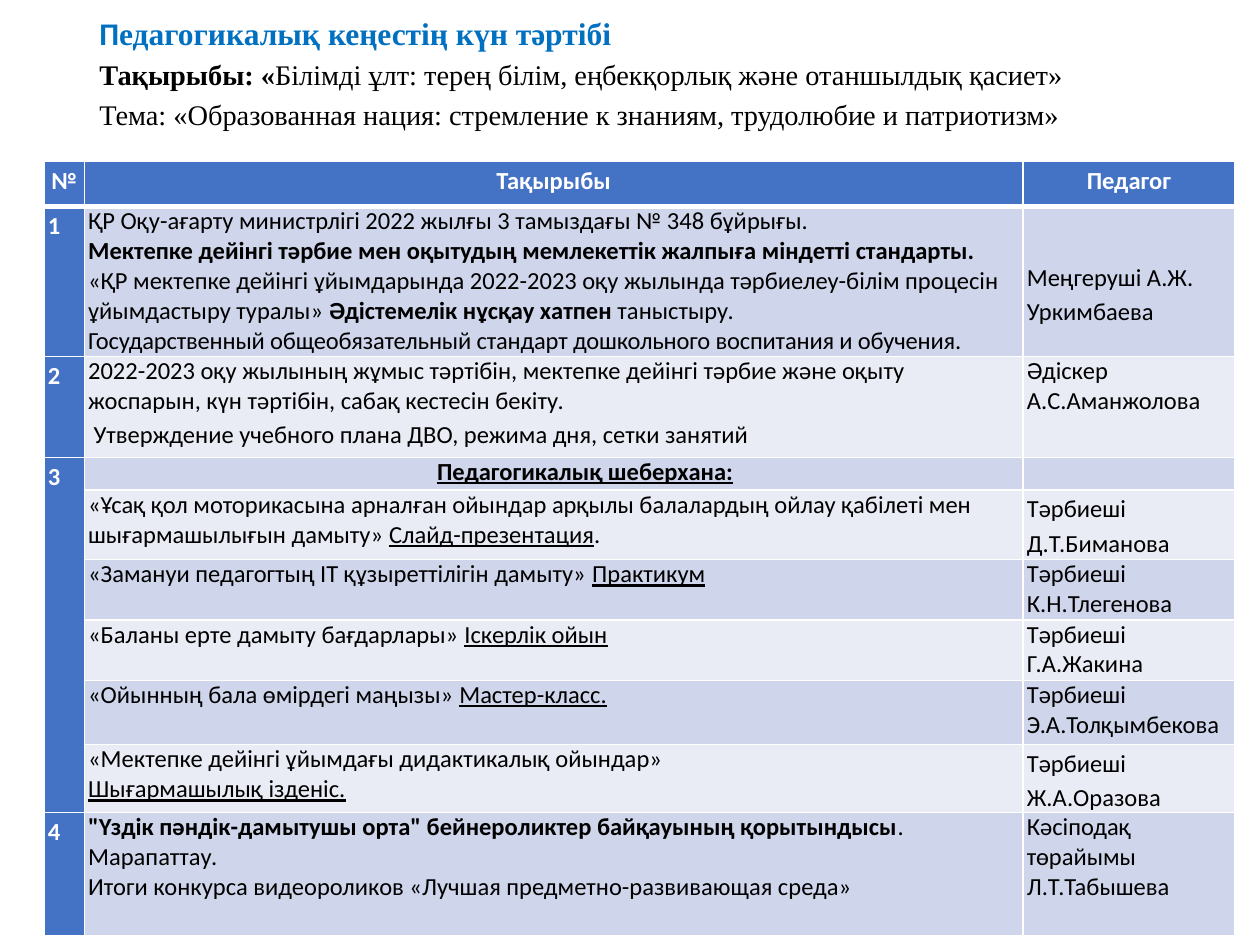
from dataclasses import dataclass

from lxml.etree import SubElement
from pptx import Presentation
from pptx.dml.color import RGBColor
from pptx.enum.text import MSO_ANCHOR, PP_ALIGN
from pptx.oxml.ns import qn
from pptx.util import Inches, Pt

BLACK = RGBColor(0x00, 0x00, 0x00)
WHITE = RGBColor(0xFF, 0xFF, 0xFF)
TITLE_BLUE = RGBColor(0x00, 0x70, 0xC0)
HEADER_BLUE = RGBColor(0x44, 0x72, 0xC4)
BAND_DARK = RGBColor(0xCF, 0xD5, 0xEA)
BAND_LIGHT = RGBColor(0xE9, 0xEB, 0xF5)

SERIF = "Times New Roman"
BOLD = {"bold": True}
UNDERLINED = {"underline": True}
HEADING = {"bold": True, "color": WHITE}
TITLE_STYLE = {"size": 18, "bold": True, "color": TITLE_BLUE}
SUBTITLE_STYLE = {"size": 16.2, "font": SERIF}

COLUMN_WIDTHS = [0.32, 7.45, 1.68]
ROW_HEIGHTS = [0.36, 1.19, 0.8, 0.26, 0.55, 0.48, 0.48, 0.51, 0.54, 0.98]
WORKSHOP_ROWS = (3, 8)


@dataclass
class Line:
    """One paragraph: runs are (text, format) pairs."""
    runs: list
    spaced: bool = False
    align: PP_ALIGN = PP_ALIGN.LEFT
    indent: float = 0


def plain(text, spaced=False):
    return Line([(text, {})], spaced)


def heading(text, align=PP_ALIGN.CENTER):
    return Line([(text, HEADING)], True, align)


def topic(text, activity, ending=""):
    return Line([(text, {}), (activity, UNDERLINED), (ending, {})])


HEADER = ["№", "Тақырыбы", "Педагог"]

# number, topic lines, teacher line
AGENDA = [
    ("1", [
        plain("ҚР Оқу-ағарту министрлігі 2022 жылғы 3 тамыздағы № 348 бұйрығы."),
        Line([("Мектепке дейінгі тәрбие мен оқытудың мемлекеттік жалпыға "
               "міндетті стандарты.", BOLD)]),
        Line([("«ҚР мектепке дейінгі ұйымдарында 2022-2023 оқу жылында "
               "тәрбиелеу-білім процесін ұйымдастыру туралы» ", {}),
              ("Әдістемелік нұсқау хатпен ", BOLD), ("таныстыру.", {})]),
        Line([("Государственный общеобязательный стандарт дошкольного "
               "воспитания и обучения.", {"spacing": -0.1})]),
    ], plain("Меңгеруші А.Ж. Уркимбаева", spaced=True)),
    ("2", [
        plain("2022-2023 оқу жылының жұмыс тәртібін, мектепке дейінгі тәрбие және "
              "оқыту жоспарын, күн тәртібін, сабақ кестесін бекіту."),
        plain(" Утверждение учебного плана ДВО, режима дня, сетки занятий", spaced=True),
    ], plain("Әдіскер А.С.Аманжолова")),
    ("3", [Line([("Педагогикалық шеберхана:", BOLD | UNDERLINED)],
                align=PP_ALIGN.CENTER, indent=0.5)], Line([])),
    ("", [topic("«Ұсақ қол моторикасына арналған ойындар арқылы балалардың ойлау "
                "қабілеті мен шығармашылығын дамыту» ", "Слайд-презентация", ".")],
     plain("Тәрбиеші Д.Т.Биманова", spaced=True)),
    ("", [topic("«Замануи педагогтың IT құзыреттілігін дамыту» ", "Практикум")],
     plain("Тәрбиеші К.Н.Тлегенова")),
    ("", [topic("«Баланы ерте дамыту бағдарлары» ", "Іскерлік ойын")],
     plain("Тәрбиеші Г.А.Жакина")),
    ("", [topic("«Ойынның бала өмірдегі маңызы» ", "Мастер-класс.")],
     plain("Тәрбиеші Э.А.Толқымбекова")),
    ("", [plain("«Мектепке дейінгі ұйымдағы дидактикалық ойындар»"),
          Line([("Шығармашылық ізденіс.", UNDERLINED)])],
     plain("Тәрбиеші Ж.А.Оразова", spaced=True)),
    ("4", [
        Line([("\"Үздік пәндік-дамытушы орта\" бейнероликтер байқауының "
               "қорытындысы", BOLD), (". Марапаттау.", {})]),
        plain("Итоги конкурса видеороликов «Лучшая предметно-развивающая среда»"),
    ], plain("Кәсіподақ төрайымы Л.Т.Табышева")),
]


def add_text(paragraph, text, *, size=14, font="Calibri", color=BLACK,
             bold=False, underline=False, spacing=0):
    run = paragraph.add_run()
    run.text = text
    run.font.size = Pt(size)
    run.font.name = font
    run.font.color.rgb = color
    run.font.bold = bold
    run.font.underline = underline
    if spacing:
        run.font._element.set("spc", str(round(spacing * 100)))


def write_lines(frame, lines):
    for index, line in enumerate(lines):
        paragraph = frame.add_paragraph() if index else frame.paragraphs[0]
        paragraph.alignment = line.align
        if line.spaced:
            paragraph.line_spacing = 1.15
            paragraph.space_after = Pt(10)
        if line.indent:
            paragraph._p.get_or_add_pPr().set("marL", str(Inches(line.indent)))
        for text, style in line.runs:
            if text:
                add_text(paragraph, text, **style)
        if not line.runs:
            SubElement(paragraph._p, qn("a:endParaRPr"), sz="1400")


def set_borders(cell, bottom_width=1):
    properties = cell._tc.get_or_add_tcPr()
    widths = {"a:lnL": 1, "a:lnR": 1, "a:lnT": 1, "a:lnB": bottom_width}
    for position, (tag, width) in enumerate(widths.items()):
        border = properties.makeelement(qn(tag), {"w": str(Pt(width))})
        fill = SubElement(border, qn("a:solidFill"))
        SubElement(fill, qn("a:srgbClr"), val=str(WHITE))
        properties.insert(position, border)


def fill_cell(cell, lines, color, bottom_width=1):
    cell.margin_left = cell.margin_right = Inches(0.03)
    cell.margin_top = cell.margin_bottom = 0
    cell.fill.solid()
    cell.fill.fore_color.rgb = color
    set_borders(cell, bottom_width)
    write_lines(cell.text_frame, lines)


def add_title(slide):
    box = slide.shapes.add_textbox(Inches(0.69), Inches(0.1), Inches(8.62), Inches(0.95))
    frame = box.text_frame
    frame.word_wrap = True
    frame.margin_top = frame.margin_bottom = 0
    frame.vertical_anchor = MSO_ANCHOR.TOP
    write_lines(frame, [
        Line([("П", TITLE_STYLE),
              ("едагогикалық кеңестің күн тәртібі", TITLE_STYLE | {"font": SERIF})]),
        Line([("Тақырыбы: «", SUBTITLE_STYLE | BOLD),
              ("Білімді ұлт: терең білім, еңбекқорлық және отаншылдық қасиет»",
               SUBTITLE_STYLE)]),
        Line([("Тема: «Образованная нация: стремление к знаниям, трудолюбие и "
               "патриотизм»", SUBTITLE_STYLE)]),
    ])
    for paragraph in frame.paragraphs:
        paragraph.line_spacing = Pt(22.5)


def add_agenda(slide):
    table = slide.shapes.add_table(
        len(ROW_HEIGHTS), len(COLUMN_WIDTHS), Inches(0.35), Inches(1.28),
        Inches(sum(COLUMN_WIDTHS)), Inches(sum(ROW_HEIGHTS))).table
    for column, width in zip(table.columns, COLUMN_WIDTHS):
        column.width = Inches(width)
    for row, height in zip(table.rows, ROW_HEIGHTS):
        row.height = Inches(height)

    for column, label in enumerate(HEADER):
        fill_cell(table.cell(0, column), [heading(label)], HEADER_BLUE, bottom_width=3)
    for row, (number, topics, teacher) in enumerate(AGENDA, start=1):
        band = BAND_DARK if row % 2 else BAND_LIGHT
        number_lines = [heading(number, PP_ALIGN.LEFT)] if number else []
        fill_cell(table.cell(row, 0), number_lines, HEADER_BLUE)
        fill_cell(table.cell(row, 1), topics, band)
        fill_cell(table.cell(row, 2), [teacher], band)

    table.cell(1, 2).margin_top = Inches(0.41)
    first, last = WORKSHOP_ROWS
    table.cell(first, 0).merge(table.cell(last, 0))


def main():
    presentation = Presentation()
    presentation.slide_width = Inches(10)
    presentation.slide_height = Inches(7.5)
    slide = presentation.slides.add_slide(presentation.slide_layouts[6])
    add_title(slide)
    add_agenda(slide)
    presentation.save("out.pptx")


if __name__ == "__main__":
    main()
